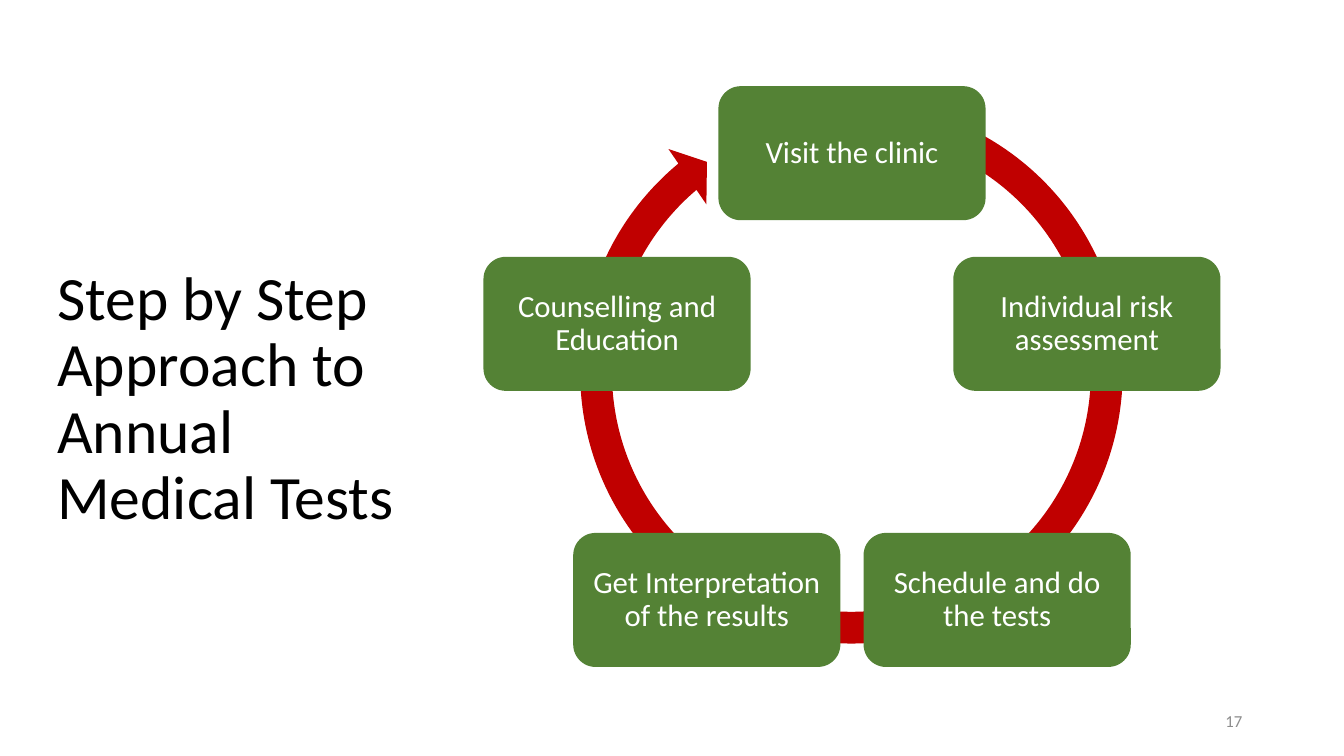
from dataclasses import dataclass
from math import cos, pi, sin

from pptx import Presentation
from pptx.dml.color import RGBColor
from pptx.enum.shapes import MSO_SHAPE
from pptx.enum.text import MSO_ANCHOR, PP_ALIGN
from pptx.util import Emu, Pt

EMU_PER_PX = 9144  # 100 px to the inch


@dataclass(frozen=True)
class Theme:
    font: str = "Calibri"
    title_size: int = 44
    step_size: int = 22
    number_size: int = 12
    title_color: str = "000000"
    step_color: str = "FFFFFF"
    number_color: str = "8C8C8C"
    step_fill: str = "548235"
    ring_fill: str = "C00000"


THEME = Theme()

# Clockwise from the top
STEPS = [
    "Visit the clinic",
    "Individual risk assessment",
    "Schedule and do the tests",
    "Get Interpretation of the results",
    "Counselling and Education",
]
CYCLE_X, CYCLE_Y, CYCLE_RADIUS = 845, 397, 245
STEP_WIDTH, STEP_HEIGHT = 265, 133
# Thickness, head angle, end angle, start angle, head width
RING_ADJUSTMENTS = [0.055, 3.307, 138.026, 173.697, 0.058]


def px(length):
    return Emu(round(length * EMU_PER_PX))


def write(frame, text, size, color, align, spacing=None, inset=None):
    frame.word_wrap = True
    frame.vertical_anchor = MSO_ANCHOR.MIDDLE
    if inset is not None:
        frame.margin_left = frame.margin_right = px(inset)
        frame.margin_top = frame.margin_bottom = px(inset)
    paragraph = frame.paragraphs[0]
    paragraph.alignment = align
    paragraph.line_spacing = spacing
    run = paragraph.add_run()
    run.text = text
    run.font.name = THEME.font
    run.font.size = Pt(size)
    run.font.color.rgb = RGBColor.from_string(color)


def add_label(slide, box, *style, **spacing):
    label = slide.shapes.add_textbox(*map(px, box))
    write(label.text_frame, *style, **spacing)


def add_filled(slide, preset, box, fill):
    figure = slide.shapes.add_shape(preset, *map(px, box))
    figure.shadow.inherit = False
    figure.fill.solid()
    figure.fill.fore_color.rgb = RGBColor.from_string(fill)
    figure.line.fill.background()
    return figure


def add_ring(slide):
    ring = add_filled(slide, MSO_SHAPE.CIRCULAR_ARROW, (558, 83, 573, 573), THEME.ring_fill)
    for index, value in enumerate(RING_ADJUSTMENTS):
        ring.adjustments[index] = value


def add_step(slide, index, text):
    angle = 2 * pi * index / len(STEPS)
    left = CYCLE_X + CYCLE_RADIUS * sin(angle) - STEP_WIDTH / 2
    top = CYCLE_Y - CYCLE_RADIUS * cos(angle) - STEP_HEIGHT / 2
    step = add_filled(slide, MSO_SHAPE.ROUNDED_RECTANGLE,
                      (left, top, STEP_WIDTH, STEP_HEIGHT), THEME.step_fill)
    write(step.text_frame, text, THEME.step_size, THEME.step_color,
          PP_ALIGN.CENTER, spacing=0.9, inset=9)


def main():
    deck = Presentation()
    deck.slide_width, deck.slide_height = px(1333), px(750)
    slide = deck.slides.add_slide(deck.slide_layouts[6])

    # Title and slide number
    add_label(slide, (47, 167, 369, 460), "Step by Step Approach to Annual Medical Tests",
              THEME.title_size, THEME.title_color, PP_ALIGN.LEFT, spacing=0.9)
    add_label(slide, (942, 695, 300, 40), "17",
              THEME.number_size, THEME.number_color, PP_ALIGN.RIGHT)

    # Cycle of steps in front of the ring
    add_ring(slide)
    for index, text in enumerate(STEPS):
        add_step(slide, index, text)

    deck.save("out.pptx")


if __name__ == "__main__":
    main()
